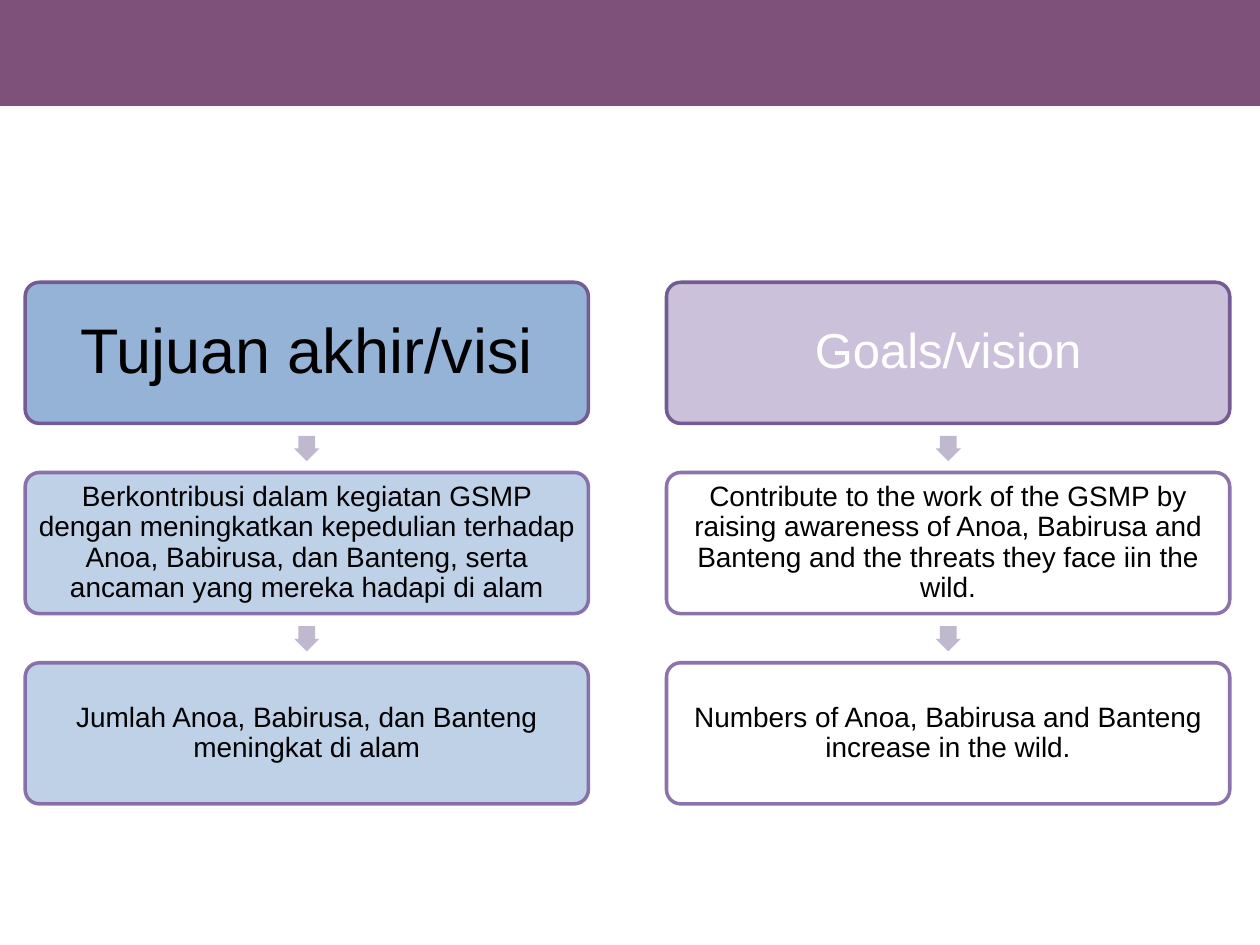
from dataclasses import dataclass

from lxml import etree
from pptx import Presentation
from pptx import util as u
from pptx.dml.color import RGBColor
from pptx.enum import shapes, text
from pptx.oxml import ns

Inches, Pt = u.Inches, u.Pt
Kind = shapes.MSO_SHAPE


@dataclass(frozen=True)
class Theme:
    font: str = "Arial"
    band: str = "7D5179"
    blue: str = "95B3D7"
    lilac: str = "CCC1DA"
    pale: str = "B9CDE5"
    white: str = "FFFFFF"
    black: str = "000000"
    head_edge: str = "745B93"
    step_edge: str = "8064A2"
    arrow: str = "C0B8CE"
    big: int = 36
    mid: int = 28
    body: int = 16


T = Theme()


def paint(fill, tone, alpha=100):
    fill.solid()
    fill.fore_color.rgb = RGBColor.from_string(tone)
    if alpha < 100:
        node = fill._xPr.find(".//" + ns.qn("a:srgbClr"))
        etree.SubElement(node, ns.qn("a:alpha"), val=str(alpha * 1000))


def add_shape(slide, kind, box, tone, alpha=100):
    shape = slide.shapes.add_shape(kind, *map(Inches, box))
    shape.shadow.inherit = False
    paint(shape.fill, tone, alpha)
    shape.line.fill.background()
    return shape


def add_card(slide, box, words, look):
    """Rounded box with centred text."""
    card = add_shape(slide, Kind.ROUNDED_RECTANGLE, box, look["fill"], look["alpha"])
    card.adjustments[0] = 0.1
    card.line.width = Pt(2)
    paint(card.line.fill, look["edge"], look["alpha"])
    frame = card.text_frame
    pad = Inches(look["pad"])
    form = dict(word_wrap=True, vertical_anchor=text.MSO_ANCHOR.MIDDLE,
                margin_left=pad, margin_right=pad, margin_top=pad, margin_bottom=pad)
    for key, val in form.items():
        setattr(frame, key, val)
    para = frame.paragraphs[0]
    para.alignment = text.PP_ALIGN.CENTER
    para.line_spacing = 0.9
    run = para.add_run()
    run.text = words
    for key, val in dict(name=T.font, size=Pt(look["size"])).items():
        setattr(run.font, key, val)
    run.font.color.rgb = RGBColor.from_string(look["ink"])


def add_arrow(slide, mid, top):
    """Small arrow that points down to the next card."""
    side = 0.2
    arrow = add_shape(slide, Kind.RIGHT_ARROW, (mid - side / 2, top, side, side), T.arrow)
    arrow.rotation = 90
    arrow.adjustments[0] = 0.667
    arrow.adjustments[1] = 0.5


def add_column(slide, box, head, steps, style):
    """Heading card with step cards below it, spread over the box."""
    left, top, width, height = box
    tall = 1.12
    pitch = (height - tall) / len(steps)
    first = dict(fill=style["head"], edge=T.head_edge, alpha=100,
                 size=style["size"], ink=style["ink"], pad=style["pad"])
    rest = dict(fill=style["step"], edge=T.step_edge, alpha=90,
                size=T.body, ink=T.black, pad=0.02)
    for row, words in enumerate([head, *steps]):
        y = top + row * pitch
        if row:
            add_arrow(slide, left + width / 2, y - 0.29)
        add_card(slide, (left, y, width, tall), words, rest if row else first)


def main():
    deck = Presentation()
    deck.slide_width, deck.slide_height = Inches(10), Inches(7.5)
    slide = deck.slides.add_slide(deck.slide_layouts[6])

    # Top band
    add_shape(slide, Kind.RECTANGLE, (0, 0, 10, 0.84), T.band)

    # Indonesian column
    add_column(slide, (0.2, 2.24, 4.47, 4.14), "Tujuan akhir/visi", [
        "Berkontribusi dalam kegiatan GSMP dengan meningkatkan kepedulian terhadap "
        "Anoa, Babirusa, dan Banteng, serta ancaman yang mereka hadapi di alam",
        "Jumlah Anoa, Babirusa, dan Banteng meningkat di alam",
    ], dict(head=T.blue, step=T.pale, size=T.big, ink=T.black, pad=0.05))

    # English column
    add_column(slide, (5.29, 2.24, 4.47, 4.14), "Goals/vision", [
        "Contribute to the work of the GSMP by raising awareness of Anoa, Babirusa "
        "and Banteng and the threats they face iin the wild.",
        "Numbers of Anoa, Babirusa and Banteng increase in the wild.",
    ], dict(head=T.lilac, step=T.white, size=T.mid, ink=T.white, pad=0.04))

    deck.save("out.pptx")


if __name__ == "__main__":
    main()
